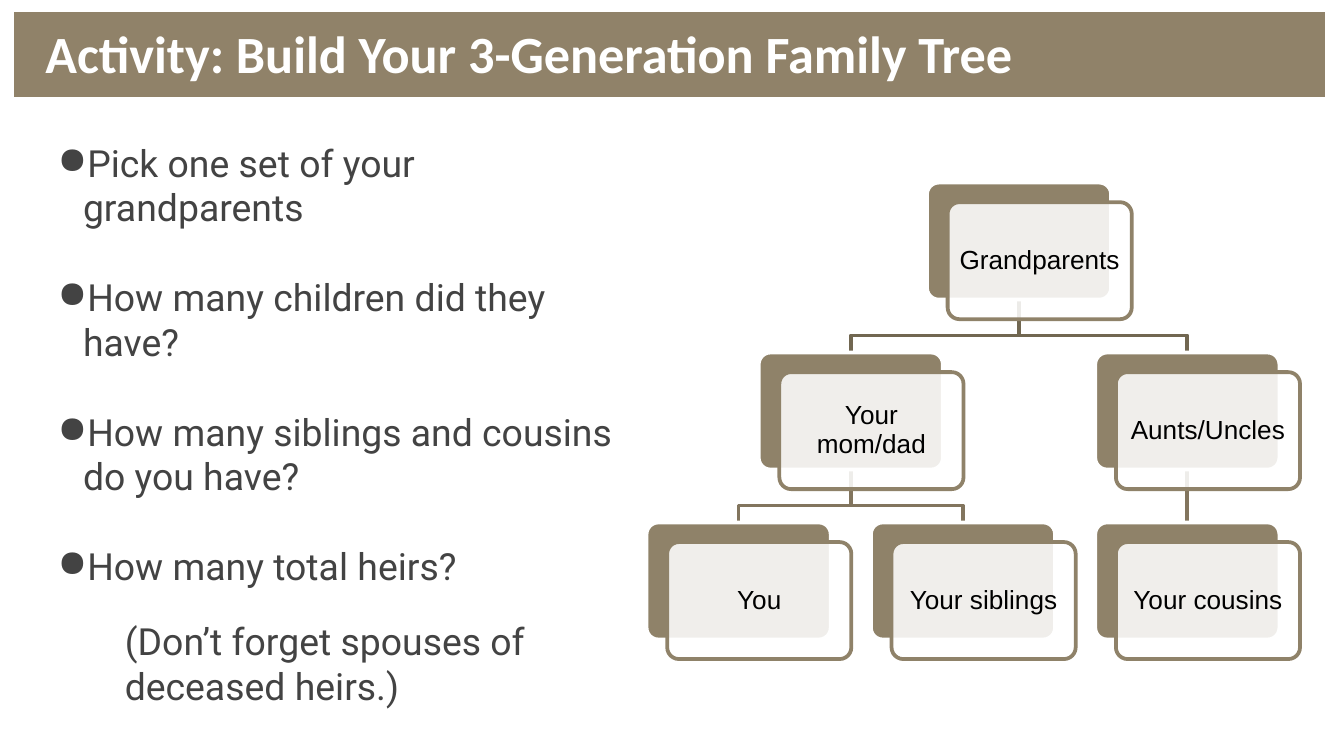
from dataclasses import dataclass
from typing import Optional

from lxml.etree import SubElement
from pptx import Presentation
from pptx.dml.color import RGBColor
from pptx.enum.shapes import MSO_CONNECTOR as CONN, MSO_SHAPE as SHAPE
from pptx.enum.text import MSO_ANCHOR as ANCHOR, PP_ALIGN as ALIGN
from pptx.oxml.ns import qn
from pptx.util import Cm, Pt

TAN, WHITE, BLACK, GREY = "8F8269", "FFFFFF", "000000", "434343"
LINK_COLOURS = ("716751", "82755E")  # by level of the parent

# Tree grid in cm
LEFT, TOP, COL, ROW = 12.22, 3.45, 1.06, 3.21
CARD_W, CARD_H = 3.48, 2.21
SHIFT_X, SHIFT_Y = 0.39, 0.37
ELBOW = 0.68


@dataclass
class Person:
    text: str
    col: int
    level: int
    parent: Optional[str] = None

    @property
    def x(self) -> float:
        return LEFT + self.col * COL

    @property
    def y(self) -> float:
        return TOP + self.level * ROW

    @property
    def middle(self) -> float:
        return self.x + CARD_W / 2


@dataclass
class Point:
    text: str
    before: float = 24
    bullet: bool = True


FAMILY = [
    Person("Grandparents", 5, 0),
    Person("Your mom/dad", 2, 1, "Grandparents"),
    Person("You", 0, 2, "Your mom/dad"),
    Person("Your siblings", 4, 2, "Your mom/dad"),
    Person("Aunts/Uncles", 8, 1, "Grandparents"),
    Person("Your cousins", 8, 2, "Aunts/Uncles"),
]
POINTS = [
    Point("Pick one set of your grandparents", before=0),
    Point("How many children did they have?"),
    Point("How many siblings and cousins do you have?"),
    Point("How many total heirs?"),
    Point("(Don’t forget spouses of deceased heirs.)", before=16, bullet=False),
]


def colour(value: str) -> RGBColor:
    return RGBColor.from_string(value)


def write(p, text: str, *, font: str, size: float, color: str, bold: bool = False) -> None:
    r = p.add_run()
    r.text = text
    r.font.name, r.font.size, r.font.bold = font, Pt(size), bold
    r.font.color.rgb = colour(color)


def set_frame(tf, anchor, inset: float) -> None:
    tf.word_wrap = True
    tf.vertical_anchor = anchor
    tf.margin_left = tf.margin_right = tf.margin_top = tf.margin_bottom = Cm(inset)


def indent(p, left: float, first: float, bullet: bool) -> None:
    pPr = p._p.get_or_add_pPr()
    pPr.set("marL", str(Cm(left)))
    pPr.set("indent", str(Cm(first)))
    if bullet:
        clr = SubElement(pPr, qn("a:buClr"))
        SubElement(clr, qn("a:srgbClr"), val=GREY)
        SubElement(pPr, qn("a:buChar"), char="●")
    else:
        SubElement(pPr, qn("a:buNone"))


def add_box(s, kind, x: float, y: float, w: float, h: float, fill: str,
            line: Optional[str] = None, alpha: Optional[int] = None):
    sp = s.shapes.add_shape(kind, Cm(x), Cm(y), Cm(w), Cm(h))
    sp.shadow.inherit = False
    sp.fill.solid()
    sp.fill.fore_color.rgb = colour(fill)
    if alpha is not None:
        clr = sp._element.spPr.find(qn("a:solidFill"))[0]
        SubElement(clr, qn("a:alpha"), val=str(alpha * 1000))
    if line:
        sp.line.color.rgb = colour(line)
        sp.line.width = Pt(2)
    else:
        sp.line.fill.background()
    return sp


def add_link(s, parent: Person, child: Person) -> None:
    x1, y1, x2, y2 = parent.middle, parent.y + CARD_H, child.middle, child.y
    if parent.col == child.col:
        sp = s.shapes.add_connector(CONN.STRAIGHT, Cm(x1), Cm(y1), Cm(x2), Cm(y2))
        SubElement(sp._element.spPr, qn("a:effectLst"))
    else:
        bend = y1 + ELBOW
        builder = s.shapes.build_freeform(Cm(x1), Cm(y1))
        corners = [(x1, bend), (x2, bend), (x2, y2)]
        builder.add_line_segments([(Cm(x), Cm(y)) for x, y in corners], close=False)
        sp = builder.convert_to_shape()
        sp.shadow.inherit = False
        sp.fill.background()
    sp.line.color.rgb = colour(LINK_COLOURS[parent.level])
    sp.line.width = Pt(2)


def add_card(s, person: Person) -> None:
    back = add_box(s, SHAPE.ROUNDED_RECTANGLE, person.x, person.y,
                   CARD_W, CARD_H, TAN, line=WHITE)
    front = add_box(s, SHAPE.ROUNDED_RECTANGLE, person.x + SHIFT_X, person.y + SHIFT_Y,
                    CARD_W, CARD_H, WHITE, line=TAN, alpha=87)
    for sp in (back, front):
        sp.adjustments[0] = 0.1
    set_frame(front.text_frame, ANCHOR.MIDDLE, 0.16)
    p = front.text_frame.paragraphs[0]
    p.alignment, p.line_spacing = ALIGN.CENTER, 0.9
    write(p, person.text, font="Arial", size=14, color=BLACK)


def add_points(s, points: list[Point]) -> None:
    tf = s.shapes.add_textbox(Cm(0.84), Cm(2.39), Cm(11.38), Cm(10.67)).text_frame
    set_frame(tf, ANCHOR.TOP, 0.25)
    for i, point in enumerate(points):
        p = tf.add_paragraph() if i else tf.paragraphs[0]
        p.space_before = Pt(point.before)
        if point.bullet:
            indent(p, 0.48, -0.48, True)
        else:
            p.level = 1
            indent(p, 1.27, 0, False)
        write(p, point.text, font="Roboto", size=20, color=GREY)


def main() -> None:
    prs = Presentation()
    prs.slide_width, prs.slide_height = Cm(25.4), Cm(14.28)
    s = prs.slides.add_slide(prs.slide_layouts[6])

    # Title band
    add_box(s, SHAPE.RECTANGLE, 0.27, 0.23, 24.77, 1.6, "908269")
    tf = s.shapes.add_textbox(Cm(0.61), Cm(0.23), Cm(24.41), Cm(1.6)).text_frame
    set_frame(tf, ANCHOR.BOTTOM, 0.25)
    write(tf.paragraphs[0], "Activity: Build Your 3-Generation Family Tree",
          font="Calibri", size=28, color=WHITE, bold=True)

    # Questions
    add_points(s, POINTS)

    # Family tree, links behind cards
    by_name = {person.text: person for person in FAMILY}
    for person in FAMILY:
        if person.parent:
            add_link(s, by_name[person.parent], person)
    for person in FAMILY:
        add_card(s, person)

    prs.save("out.pptx")


if __name__ == "__main__":
    main()
